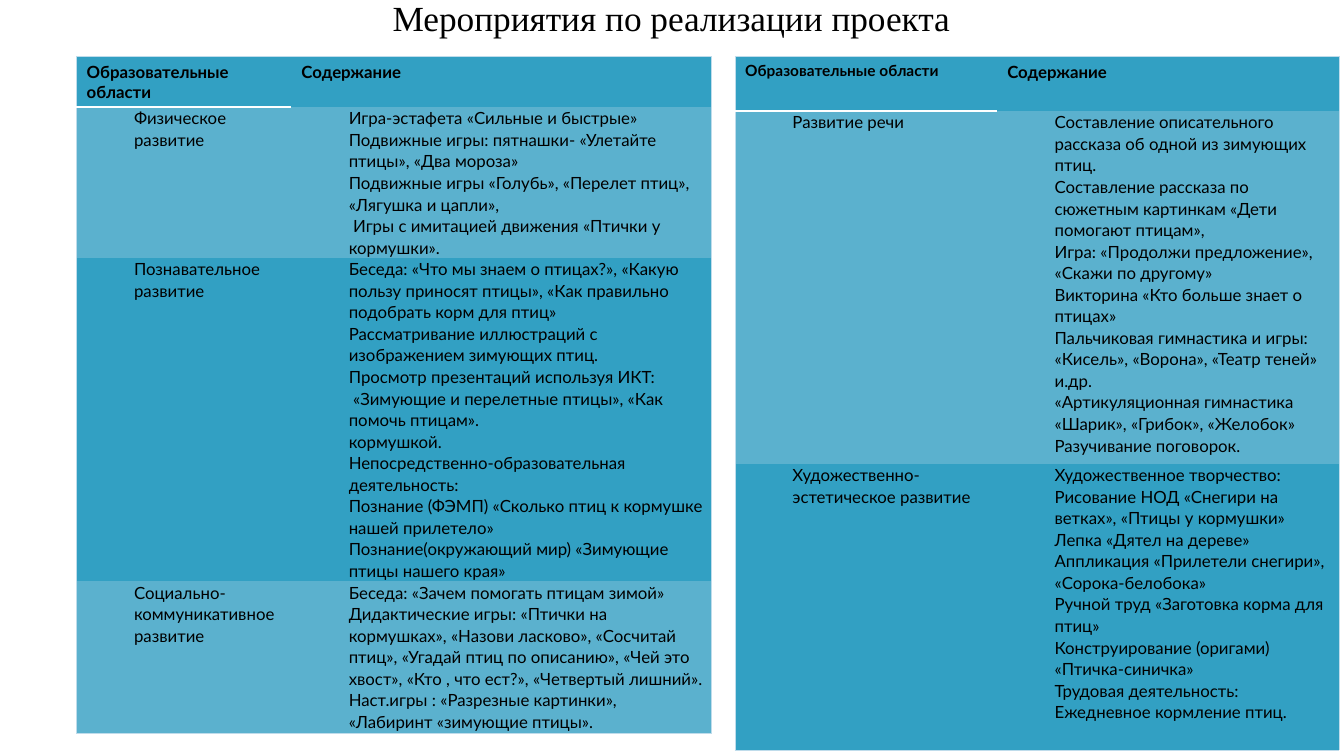
from dataclasses import dataclass
from lxml.etree import SubElement
from pptx import Presentation
from pptx.dml.color import RGBColor
from pptx.enum.text import MSO_ANCHOR, MSO_AUTO_SIZE, PP_ALIGN
from pptx.oxml.ns import qn
from pptx.util import Inches, Pt


@dataclass(frozen=True)
class Theme:
    text: str = "000000"
    dark: str = "32A0C3"
    light: str = "5BB1CE"
    edge: str = "BFDCEB"
    rule: str = "FFFFFF"
    title_font: str = "Times New Roman"
    body_font: str = "Lato"
    title_size: float = 25.2
    body_size: float = 12
    small_size: float = 11
    edge_width: float = 0.5
    rule_width: float = 1.5
    no_style: str = "{2D5ABB26-0587-4C30-8999-92F81FD0307C}"


def set_all(target, values):
    for name, value in values.items():
        setattr(target, name, value)


class Deck:
    def __init__(self, prs, theme):
        self.theme = theme
        self.s = prs.slides.add_slide(prs.slide_layouts[5])

    def style(self, font, size, name, bold=False):
        set_all(font, {"size": Pt(size), "name": name, "bold": bold})
        font.color.rgb = RGBColor.from_string(self.theme.text)

    def title(self, text, left, top, width, height):
        sp = self.s.shapes.title
        set_all(sp, {"left": Inches(left), "top": Inches(top),
                     "width": Inches(width), "height": Inches(height)})
        tf = sp.text_frame
        set_all(tf, {"word_wrap": True, "auto_size": MSO_AUTO_SIZE.NONE,
                     "vertical_anchor": MSO_ANCHOR.BOTTOM, "text": text})
        p = tf.paragraphs[0]
        set_all(p, {"alignment": PP_ALIGN.CENTER, "line_spacing": 0.9})
        self.style(p.runs[0].font, self.theme.title_size, self.theme.title_font)

    def border(self, cell, side, color, width):
        ln = SubElement(cell._tc.get_or_add_tcPr(), qn(f"a:ln{side}"), w=str(Pt(width)))
        SubElement(SubElement(ln, qn("a:solidFill")), qn("a:srgbClr"), val=color)

    def fill_cell(self, cell, lines, header, size):
        if not header:
            set_all(cell, {"margin_left": Inches(0.07), "margin_right": Inches(0.07),
                           "margin_top": 0, "margin_bottom": 0})
        tf = cell.text_frame
        for i, line in enumerate(lines):
            p = tf.add_paragraph() if i else tf.paragraphs[0]
            if not header:
                p.line_spacing = 1.07
                p._p.get_or_add_pPr().set("marL", str(Inches(0.5)))
            r = p.add_run()
            r.text = line
            self.style(r.font, size, self.theme.body_font, header)

    def table(self, left, top, widths, heights, areas, first_head_size):
        th = self.theme
        rows = [("Образовательные области", ["Содержание"]), *areas]
        frame = self.s.shapes.add_table(
            len(rows), len(widths), Inches(left), Inches(top),
            Inches(sum(widths)), Inches(sum(heights)))
        table = frame.table
        set_all(table, {"first_row": False, "horz_banding": False})
        table._tbl.tblPr.find(qn("a:tableStyleId")).text = th.no_style
        for column, width in zip(table.columns, widths):
            column.width = Inches(width)
        for i, (area, activities) in enumerate(rows):
            table.rows[i].height = Inches(heights[i])
            for j, lines in enumerate(([area], activities)):
                cell = table.cell(i, j)
                header = i == 0
                size = first_head_size if header and j == 0 else th.body_size
                self.fill_cell(cell, lines, header, size)
                self.border(cell, "R" if j else "L", th.edge, th.edge_width)
                if header:
                    self.border(cell, "T", th.edge, th.edge_width)
                    if j == 0:
                        self.border(cell, "B", th.rule, th.rule_width)
                elif i == len(rows) - 1:
                    self.border(cell, "B", th.edge, th.edge_width)
                cell.fill.solid()
                cell.fill.fore_color.rgb = RGBColor.from_string(th.light if i % 2 else th.dark)


LEFT_AREAS = [
    ("Физическое развитие", [
        "Игра-эстафета «Сильные и быстрые»",
        "Подвижные игры: пятнашки- «Улетайте птицы», «Два мороза»",
        "Подвижные игры «Голубь», «Перелет птиц», «Лягушка и цапли»,",
        " Игры с имитацией движения «Птички у кормушки».",
    ]),
    ("Познавательное развитие", [
        "Беседа: «Что мы знаем о птицах?», «Какую пользу приносят птицы», "
        "«Как правильно подобрать корм для птиц»",
        "Рассматривание иллюстраций с изображением зимующих птиц.",
        "Просмотр презентаций используя ИКТ:",
        " «Зимующие и перелетные птицы», «Как помочь птицам».",
        "кормушкой.",
        "Непосредственно-образовательная деятельность:",
        "Познание (ФЭМП) «Сколько птиц к кормушке нашей прилетело»",
        "Познание(окружающий мир) «Зимующие птицы нашего края»",
    ]),
    ("Социально-коммуникативное развитие", [
        "Беседа: «Зачем помогать птицам зимой»",
        "Дидактические игры: «Птички на кормушках», «Назови ласково», "
        "«Сосчитай птиц», «Угадай птиц по описанию», «Чей это хвост», "
        "«Кто , что ест?», «Четвертый лишний».",
        "Наст.игры : «Разрезные картинки», «Лабиринт «зимующие птицы».",
    ]),
]

RIGHT_AREAS = [
    ("Развитие речи", [
        "Составление описательного рассказа об одной из зимующих птиц.",
        "Составление рассказа по сюжетным картинкам «Дети помогают птицам»,",
        "Игра: «Продолжи предложение», «Скажи по другому»",
        "Викторина «Кто больше знает о птицах»",
        "Пальчиковая гимнастика и игры: «Кисель», «Ворона», «Театр теней» и.др.",
        "«Артикуляционная гимнастика «Шарик», «Грибок», «Желобок»",
        "Разучивание поговорок.",
    ]),
    ("Художественно-эстетическое развитие", [
        "Художественное творчество:",
        "Рисование НОД «Снегири на ветках», «Птицы у кормушки»",
        "Лепка «Дятел на дереве»",
        "Аппликация «Прилетели снегири», «Сорока-белобока»",
        "Ручной труд «Заготовка корма для птиц»",
        "Конструирование (оригами) «Птичка-синичка»",
        "Трудовая деятельность:",
        "Ежедневное кормление птиц.",
    ]),
]


def main():
    prs = Presentation()
    set_all(prs, {"slide_width": Inches(13.33), "slide_height": Inches(7.5)})
    theme = Theme()
    deck = Deck(prs, theme)
    deck.title("Мероприятия по реализации проекта", 1.41, 0, 10.5, 0.44)
    deck.table(0.76, 0.56, [2.13, 4.17], [0.49, 1.46, 2.94, 1.51],
               LEFT_AREAS, theme.body_size)
    deck.table(7.29, 0.56, [2.6, 3.39], [0.54, 3.5, 2.84],
               RIGHT_AREAS, theme.small_size)
    prs.save("out.pptx")


if __name__ == "__main__":
    main()
